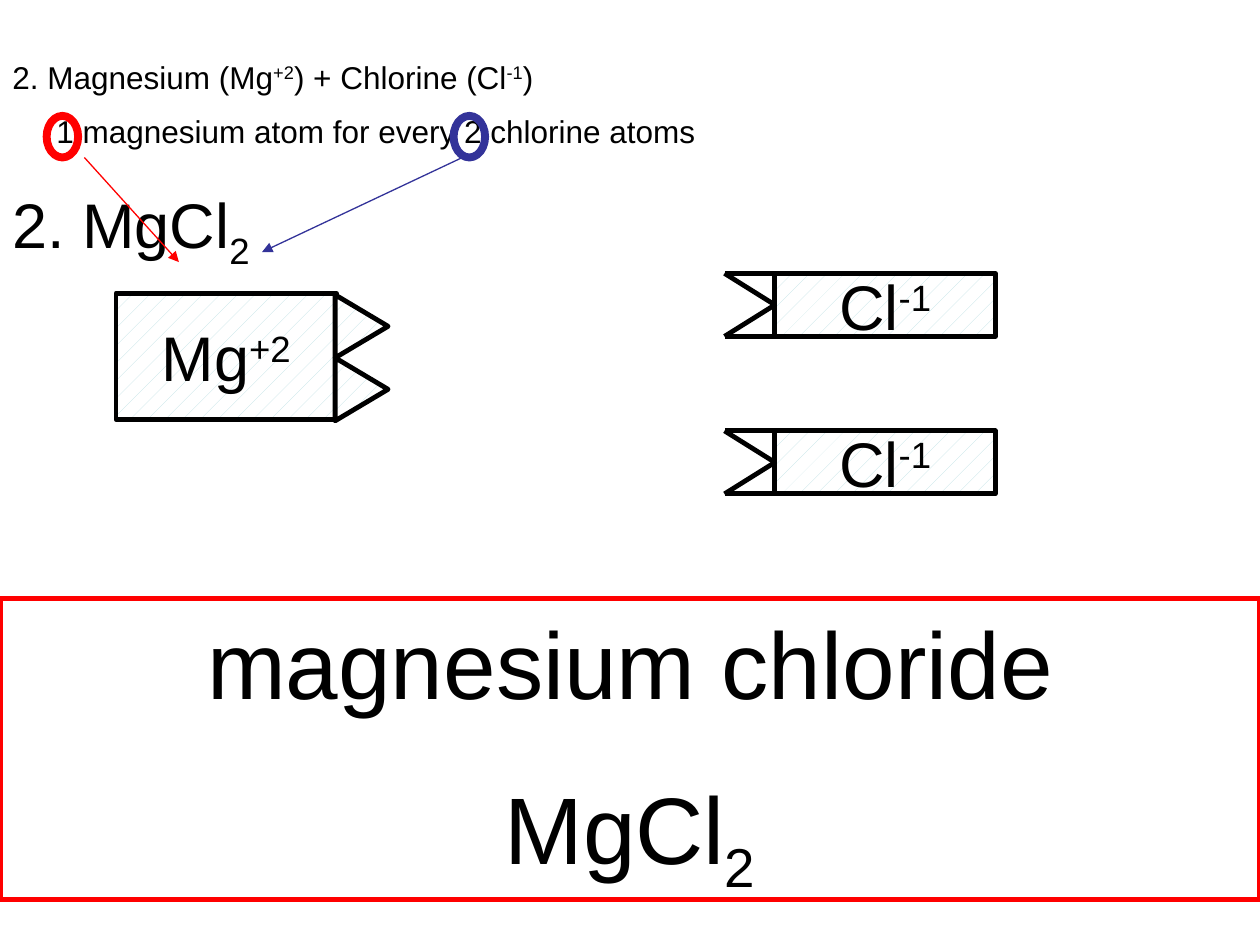
import pptx
import pptx.dml.color
import pptx.enum.dml
import pptx.enum.shapes
import pptx.enum.text
import pptx.oxml.xmlchemy
import pptx.util
from dataclasses import dataclass

Inches = pptx.util.Inches
Pt = pptx.util.Pt
Shape = pptx.enum.shapes.MSO_SHAPE
Align = pptx.enum.text.PP_ALIGN
Anchor = pptx.enum.text.MSO_ANCHOR
new_element = pptx.oxml.xmlchemy.OxmlElement
SUPER, SUB = 30000, -25000


@dataclass(frozen=True)
class Theme:
    font: str = "Arial"
    ink: str = "000000"
    red: str = "FF0000"
    blue: str = "333399"
    tint: str = "BBE0E3"
    paper: str = "FFFFFF"
    body: int = 18
    formula: int = 36
    answer: int = 54
    thin: float = 0.75
    outline: float = 2.75
    frame: float = 3
    ring: float = 4.5


def color(value):
    return pptx.dml.color.RGBColor.from_string(value)


class SlideBuilder:
    def __init__(self, page, theme):
        self.page = page
        self.theme = theme
        self.shapes = page.shapes

    def start_group(self):
        self.shapes = self.page.shapes.add_group_shape().shapes

    def end_group(self):
        self.shapes = self.page.shapes

    def shape(self, kind, left, top, width, height, line, weight,
              patterned=False, rotation=0):
        shape = self.shapes.add_shape(
            kind, Inches(left), Inches(top), Inches(width), Inches(height))
        shape.shadow.inherit = False
        shape.rotation = rotation
        shape.line.color.rgb = color(line)
        shape.line.width = Pt(weight)
        if patterned:
            shape.fill.patterned()
            shape.fill.pattern = pptx.enum.dml.MSO_PATTERN.PERCENT_5
            shape.fill.fore_color.rgb = color(self.theme.tint)
            shape.fill.back_color.rgb = color(self.theme.paper)
        else:
            shape.fill.background()
        return shape

    def line(self, start, end, line, weight, arrow=False):
        connector = self.shapes.add_connector(
            pptx.enum.shapes.MSO_CONNECTOR.STRAIGHT,
            *(Inches(value) for value in (*start, *end)))
        connector.line.color.rgb = color(line)
        connector.line.width = Pt(weight)
        properties = connector._element.spPr
        if arrow:
            tail = new_element("a:tailEnd")
            tail.set("type", "triangle")
            properties.get_or_add_ln().append(tail)
        properties.append(new_element("a:effectLst"))

    def text_box(self, left, top, width, height):
        box = self.shapes.add_textbox(
            Inches(left), Inches(top), Inches(width), Inches(height))
        box.text_frame.word_wrap = True
        return box

    def paragraph(self, box, runs, size, align=Align.LEFT, before=0, margin=0):
        frame = box.text_frame
        para = frame.paragraphs[0]
        if para.runs:
            para = frame.add_paragraph()
        para.alignment = align
        para.space_before = Pt(before)
        if margin:
            para._p.get_or_add_pPr().set("marL", str(Inches(margin)))
        for text, baseline in runs:
            span = para.add_run()
            span.text = text
            span.font.name = self.theme.font
            span.font.size = Pt(size)
            span.font.color.rgb = color(self.theme.ink)
            if baseline:
                span.font._element.set("baseline", str(baseline))

    def ion_block(self, left, top, height, symbol, charge):
        block = self.shape(Shape.RECTANGLE, left, top, 1.75, height,
                           self.theme.ink, self.theme.outline, patterned=True)
        block.text_frame.word_wrap = False
        block.text_frame.vertical_anchor = Anchor.MIDDLE
        self.paragraph(block, [(symbol, 0), (charge, SUPER)],
                       self.theme.formula, Align.CENTER)


def main():
    deck = pptx.Presentation()
    deck.slide_width, deck.slide_height = Inches(10), Inches(7.5)
    theme = Theme()
    builder = SlideBuilder(deck.slides.add_slide(deck.slide_layouts[6]), theme)

    # Problem statement and formula
    problem = builder.text_box(0, 0.41, 5.67, 1.79)
    builder.paragraph(problem, [
        ("2. Magnesium (Mg", 0), ("+2", SUPER), (") + Chlorine (Cl", 0),
        ("-1", SUPER), (")", 0)], theme.body)
    builder.paragraph(
        problem, [("1 magnesium atom for every 2 chlorine atoms", 0)],
        theme.body, before=9.5, margin=0.35)
    builder.paragraph(problem, [("2. MgCl", 0), ("2", SUB)],
                      theme.formula, before=20.5)

    # Rings around the atom counts, with arrows to the formula
    for left, start, end, ring_color in (
            (0.37, (0.67, 1.25), (1.42, 2.08), theme.red),
            (3.6, (3.67, 1.25), (2.08, 2), theme.blue)):
        builder.shape(Shape.OVAL, left, 0.92, 0.25, 0.33, ring_color, theme.ring)
        builder.line(start, end, ring_color, theme.thin, arrow=True)

    # Framed answer
    answer = builder.shape(Shape.RECTANGLE, 0, 4.75, 10, 2.39,
                           theme.red, theme.frame)
    answer.text_frame.word_wrap = True
    answer.text_frame.vertical_anchor = Anchor.TOP
    builder.paragraph(answer, [("magnesium chloride", 0)], theme.answer,
                      Align.CENTER, before=5)
    builder.paragraph(answer, [("MgCl", 0), ("2", SUB)], theme.answer,
                      Align.CENTER, before=29.5)

    # Magnesium ion with two points
    builder.start_group()
    builder.ion_block(0.92, 2.33, 1, "Mg", "+2")
    for index in range(2):
        builder.shape(Shape.ISOSCELES_TRIANGLE, 2.62, 2.38 + 0.5 * index,
                      0.5, 0.42, theme.ink, theme.outline,
                      patterned=True, rotation=90)

    # Chlorine ions, each with one notch
    left, tip, height = 6.15, 5.75, 0.5
    for top in (2.17, 3.42):
        middle, bottom = top + height / 2, top + height
        builder.start_group()
        builder.ion_block(left, top, height, "Cl", "-1")
        for start, end in (
                ((left, bottom), (tip, bottom)),
                ((left, top), (tip, top)),
                ((left, middle), (tip, bottom)),
                ((left, bottom), (left, top)),
                ((left, middle), (tip, top))):
            builder.line(start, end, theme.ink, theme.outline)
    builder.end_group()

    deck.save("out.pptx")


if __name__ == "__main__":
    main()
